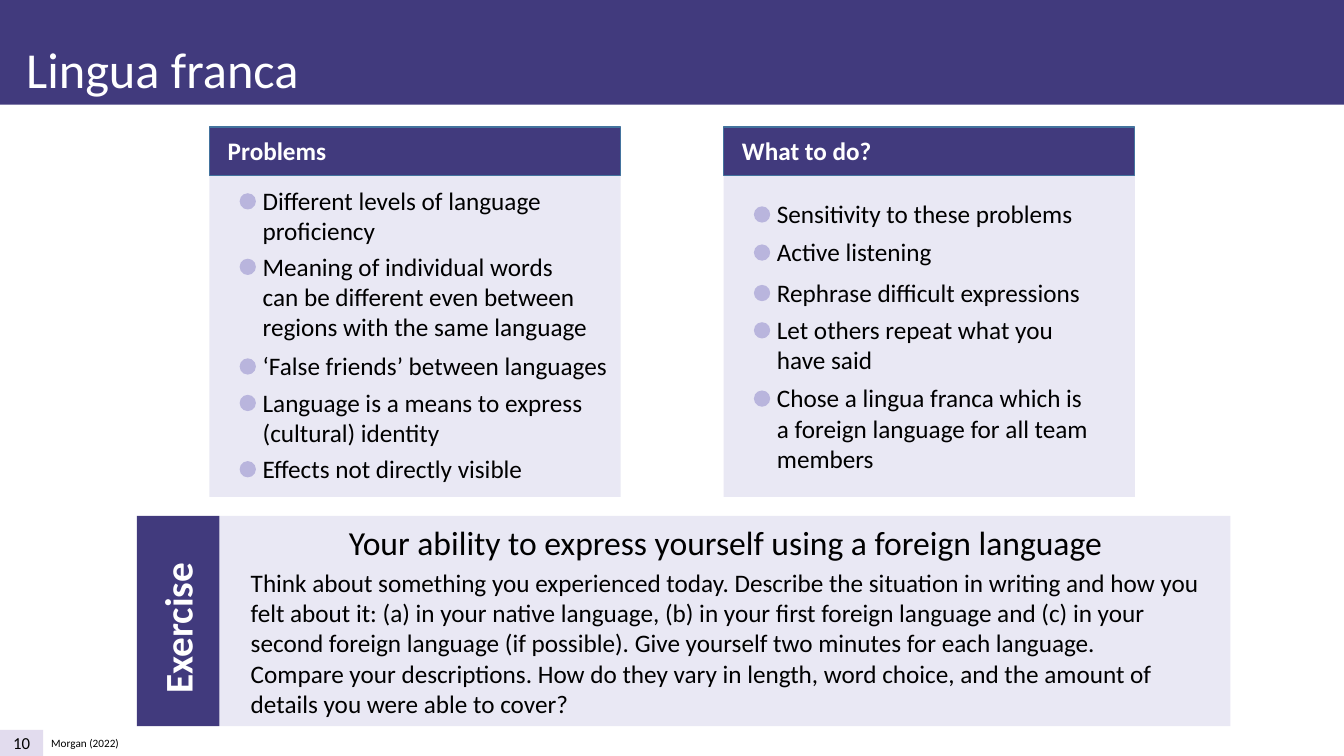
"""Build the slide on the problems of a lingua franca."""
from pptx import Presentation
from pptx import util as u
from pptx.dml.color import RGBColor
from pptx.enum import shapes, text

HUES = {"dark": "413A7D", "pale": "E9E8F4", "dot": "B9B5DD", "edge": "43739E",
        "page": "E2DCEE", "white": "FFFFFF", "black": "000000"}
RECT = shapes.MSO_SHAPE.RECTANGLE
OVAL = shapes.MSO_SHAPE.OVAL
MID = text.PP_ALIGN.CENTER

ISSUES = [
    (1.35, 7.62, "Different levels of language\vproficiency"),
    (3.0, 8.79, "Meaning of individual words\ncan be different even between\n"
                "regions with the same language"),
    (5.51, 9.3, "‘False friends’ between languages"),
    (6.43, 8.66, "Language is a means to express\n(cultural) identity"),
    (8.1, 7.14, "Effects not directly visible"),
]
STEPS = [
    (1.68, 8.05, "Sensitivity to these problems"),
    (2.64, 4.45, "Active listening"),
    (3.66, 8.26, "Rephrase difficult expressions"),
    (4.6, 7.54, "Let others repeat what you\nhave said"),
    (6.32, 8.51, "Chose a lingua franca which is\n"
                 "a foreign language for all team\nmembers"),
]
TASK = ("Think about something you experienced today. Describe the situation in "
        "writing and how you felt about it: (a) in your native language, (b) in your "
        "first foreign language and (c) in your second foreign language (if possible). "
        "Give yourself two minutes for each language.\n"
        "Compare your descriptions. How do they vary in length, word choice, and the "
        "amount of details you were able to cover?")


def hue(name):
    """Return the named colour."""
    return RGBColor.from_string(HUES[name])


def style(frame, words, size, tint, bold=False, align=None):
    """Fill a text frame and format its runs."""
    frame.text = words
    for para in frame.paragraphs:
        para.alignment = align
        for run in para.runs:
            run.font.name = "Calibri"
            run.font.size = u.Pt(size)
            run.font.bold = bold
            run.font.color.rgb = hue(tint)


def block(parts, box, fill, kind=RECT, edge=None):
    """Add a filled shape, with a line if an edge colour is given."""
    shape = parts.add_shape(kind, *map(u.Cm, box))
    shape.shadow.inherit = False
    shape.fill.solid()
    shape.fill.fore_color.rgb = hue(fill)
    if edge:
        shape.line.color.rgb = hue(edge)
        shape.line.width = u.Pt(1)
    else:
        shape.line.fill.background()
    return shape


def label(parts, box, words, size, tint="black", wrap=False, **looks):
    """Add a text box that fits its text."""
    shape = parts.add_textbox(*map(u.Cm, box))
    frame = shape.text_frame
    frame.word_wrap = wrap
    frame.auto_size = text.MSO_AUTO_SIZE.SHAPE_TO_FIT_TEXT
    style(frame, words, size, tint, **looks)
    return shape


def header(parts, x, y, w, h):
    """Draw the title band."""
    block(parts, (x, y, w, h), "dark")
    label(parts, (x + 0.41, y + 0.84, 7.44, 1.8), "Lingua franca", 36, "white")


def panel(parts, x, y, w, h, head, span, items):
    """Draw a headed panel with dotted items."""
    block(parts, (x, y, w, h), "pale")
    block(parts, (x, y, w, 1.22), "dark", edge="edge")
    label(parts, (x + 0.21, y + 0.08, span, 1.02), head, 18, "white", bold=True)
    for drop, wide, words in items:
        lines = len(words.splitlines())
        label(parts, (x + 1.09, y + drop, wide, 0.25 + 0.77 * lines), words, 18)
        block(parts, (x + 0.76, y + drop + 0.32, 0.41, 0.41), "dot", OVAL)


def task(parts, x, y, w, h):
    """Draw the exercise box with its upright tab."""
    tab = 2.08
    block(parts, (x + tab, y, w - tab, h), "pale")
    label(parts, (x + 2.62, y + 0.03, 24.43, 1.27),
          "Your ability to express yourself using a foreign language",
          24, wrap=True, align=MID)
    block(parts, (x, y, tab, h), "dark")
    side = label(parts, (x - 0.94, y + 2.04, 3.91, 1.45), "Exercise", 28, "white",
                 wrap=True, bold=True)
    side.rotation = 270
    label(parts, (x + 2.62, y + 1.17, 24.64, 4.11), TASK, 18, wrap=True)


def footer(parts, x, y, w, h):
    """Draw the page number and the citation."""
    page = block(parts, (x, y, w, h), "page")
    frame = page.text_frame
    frame.margin_left = frame.margin_right = 0
    frame.margin_top = frame.margin_bottom = 0
    frame.vertical_anchor = text.MSO_ANCHOR.MIDDLE
    style(frame, "10", 12, "black", align=MID)
    label(parts, (x + 1.04, y + 0.05, 2.24, 0.61), "Morgan (2022)", 8)


def main():
    """Build and save the slide."""
    deck = Presentation()
    deck.slide_width, deck.slide_height = u.Cm(33.87), u.Cm(19.05)
    parts = deck.slides.add_slide(deck.slide_layouts[6]).shapes
    header(parts, 0, 0, 33.87, 2.64)
    for x, head, span, items in ((18.24, "What to do?", 3.81, STEPS),
                                 (5.28, "Problems", 3.02, ISSUES)):
        panel(parts.add_group_shape().shapes, x, 3.2, 10.36, 9.32, head, span, items)
    task(parts.add_group_shape().shapes, 3.45, 13, 27.56, 5.3)
    footer(parts, 0, 18.39, 1.09, 0.66)
    deck.save("out.pptx")


if __name__ == "__main__":
    main()
